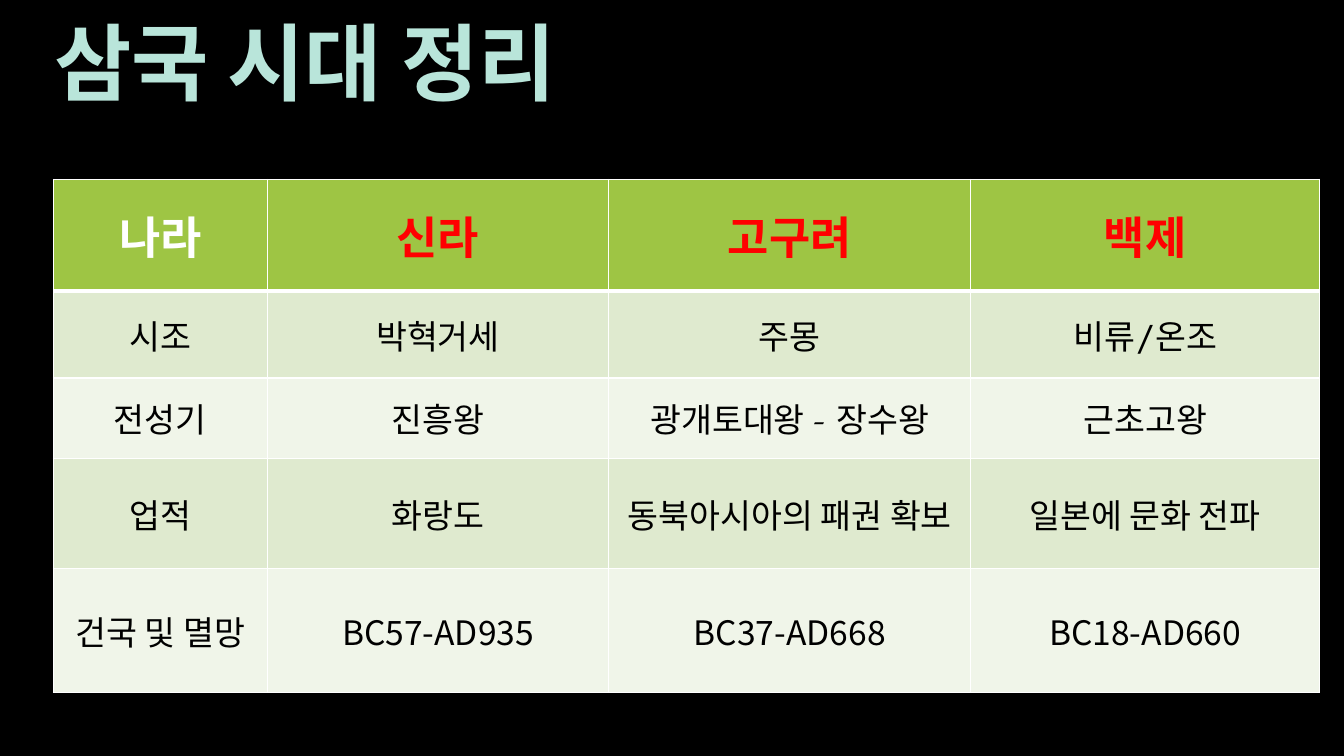
from lxml import etree
from pptx import Presentation
from pptx.dml.color import RGBColor
from pptx.enum.text import MSO_ANCHOR, PP_ALIGN
from pptx.oxml.ns import qn
from pptx.util import Pt

CENTER = PP_ALIGN.CENTER
MIDDLE = MSO_ANCHOR.MIDDLE

SERIF = "TeX Gyre Bonum"
SANS = "Noto Sans CJK KR"
BLACK, WHITE, RED, MINT = "000000", "FFFFFF", "FF0000", "B9E5DA"
HEADER_GREEN = "9EC544"
BAND_GREENS = ("DFEACF", "F0F5E9")

COLUMN_WIDTHS = (152.6, 244.1, 258.5, 249.1)
ROW_HEIGHTS = (79.9, 61.9, 57.6, 78.5, 88.6)
KINGDOM_ROWS = (
    ("나라", "신라", "고구려", "백제"),
    ("시조", "박혁거세", "주몽", "비류/온조"),
    ("전성기", "진흥왕", "광개토대왕 - 장수왕", "근초고왕"),
    ("업적", "화랑도", "동북아시아의 패권 확보", "일본에 문화 전파"),
    ("건국 및 멸망", "BC57-AD935", "BC37-AD668", "BC18-AD660"),
)


def color(value):
    return RGBColor.from_string(value)


def write_centered(frame, text, size, ink, bold=False, font=SERIF):
    para = frame.paragraphs[0]
    para.alignment = CENTER
    span = para.add_run()
    span.text = text
    span.font.size = Pt(size)
    span.font.bold = bold
    span.font.name = font
    span.font.color.rgb = color(ink)
    east_asian = etree.SubElement(span.font._element, qn("a:ea"))
    east_asian.set("typeface", SANS)
    return para


def add_title(page, text):
    box = page.shapes.add_textbox(Pt(0), Pt(4.3), Pt(435.6), Pt(87.8))
    frame = box.text_frame
    frame.word_wrap = True
    frame.vertical_anchor = MIDDLE
    para = write_centered(frame, text, 60, MINT, bold=True)
    para.line_spacing = 0.9


def set_borders(cell, widths):
    """Draw white borders; widths maps the side tags to points."""
    properties = cell._tc.get_or_add_tcPr()
    for position, (side, width) in enumerate(widths.items()):
        line = etree.Element(qn(f"a:{side}"), w=str(Pt(width)))
        fill = etree.SubElement(line, qn("a:solidFill"))
        etree.SubElement(fill, qn("a:srgbClr"), val=WHITE)
        properties.insert(position, line)


def style_cell(cell, row, column, text):
    is_header = row == 0
    cell.vertical_anchor = MIDDLE
    cell.fill.solid()
    if is_header:
        cell.fill.fore_color.rgb = color(HEADER_GREEN)
        ink = RED if column else WHITE
        write_centered(cell.text_frame, text, 32, ink, bold=True)
    else:
        cell.fill.fore_color.rgb = color(BAND_GREENS[(row - 1) % 2])
        font = SANS if text.startswith("BC") else SERIF
        write_centered(cell.text_frame, text, 24, BLACK, font=font)
    set_borders(cell, {
        "lnL": 1,
        "lnR": 1,
        "lnT": 3 if row == 1 else 1,
        "lnB": 3 if is_header else 1,
    })


def add_kingdom_table(page):
    table = page.shapes.add_table(
        len(ROW_HEIGHTS), len(COLUMN_WIDTHS), Pt(38.2), Pt(128.2),
        Pt(sum(COLUMN_WIDTHS)), Pt(sum(ROW_HEIGHTS))).table
    for column, width in zip(table.columns, COLUMN_WIDTHS):
        column.width = Pt(width)
    for row, height in zip(table.rows, ROW_HEIGHTS):
        row.height = Pt(height)
    for row, texts in enumerate(KINGDOM_ROWS):
        for column, text in enumerate(texts):
            style_cell(table.cell(row, column), row, column, text)


def main():
    deck = Presentation()
    deck.slide_width, deck.slide_height = Pt(960), Pt(540)
    page = deck.slides.add_slide(deck.slide_layouts[6])
    page.background.fill.solid()
    page.background.fill.fore_color.rgb = color(BLACK)
    add_title(page, "삼국 시대 정리")
    add_kingdom_table(page)
    deck.save("out.pptx")


if __name__ == "__main__":
    main()
